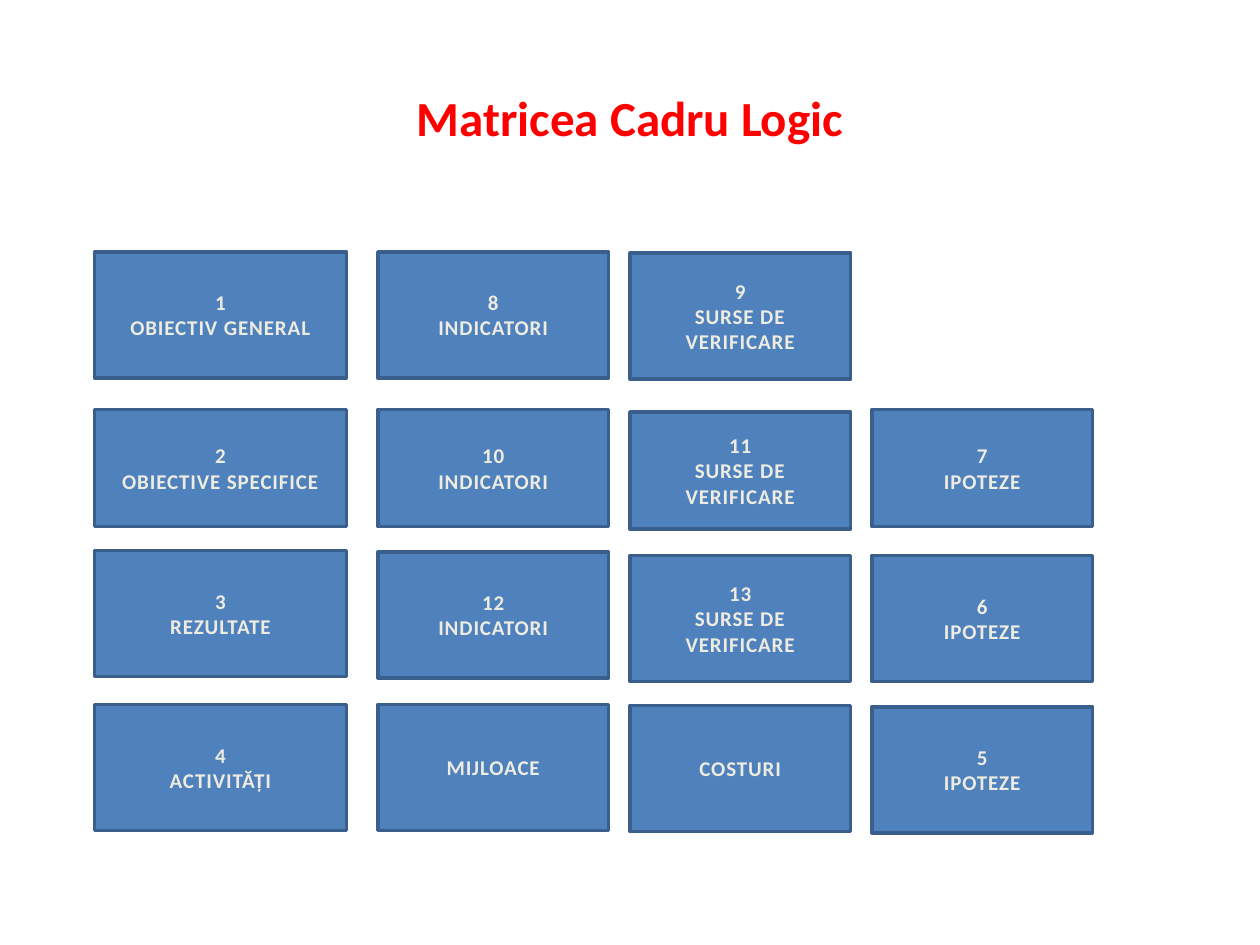
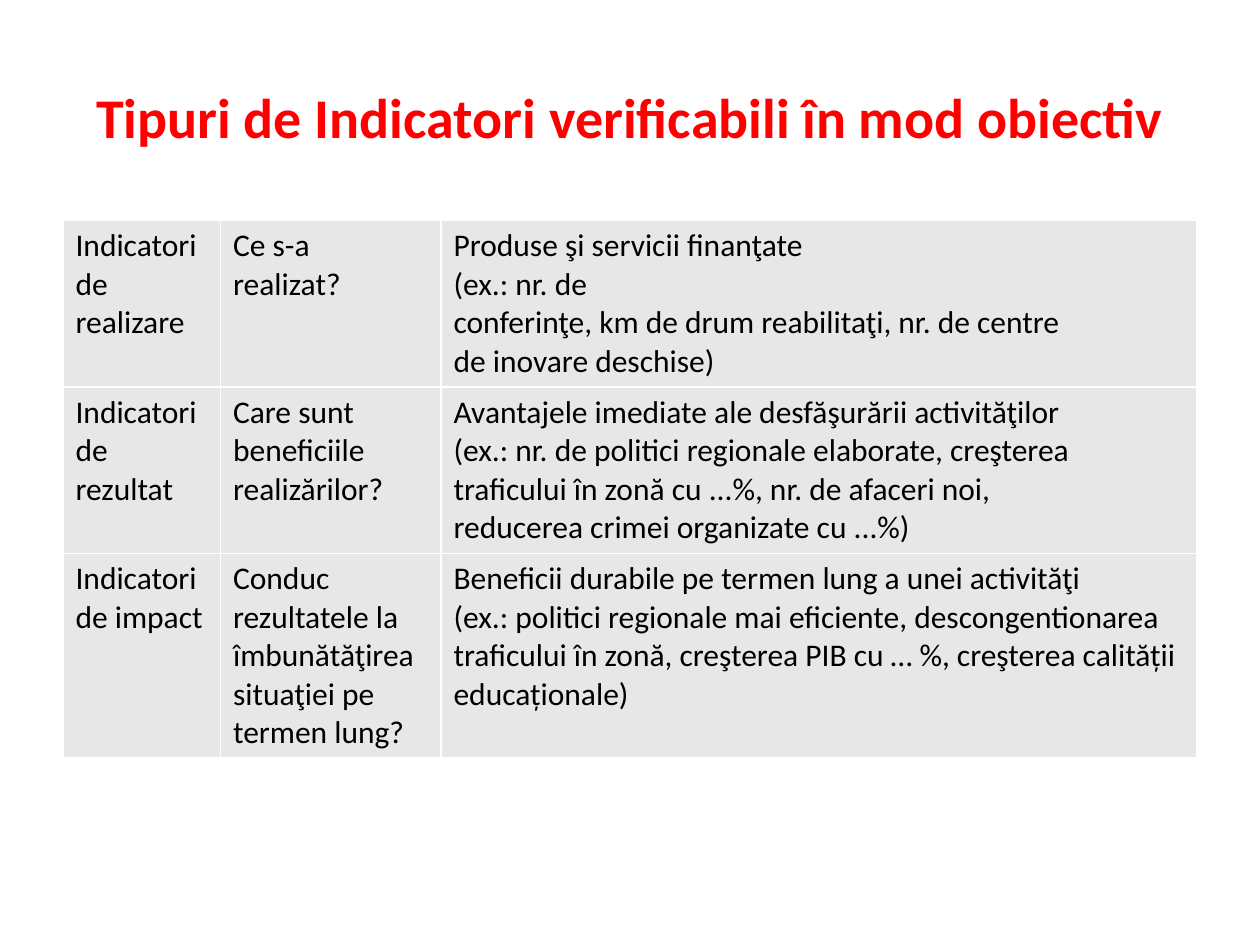
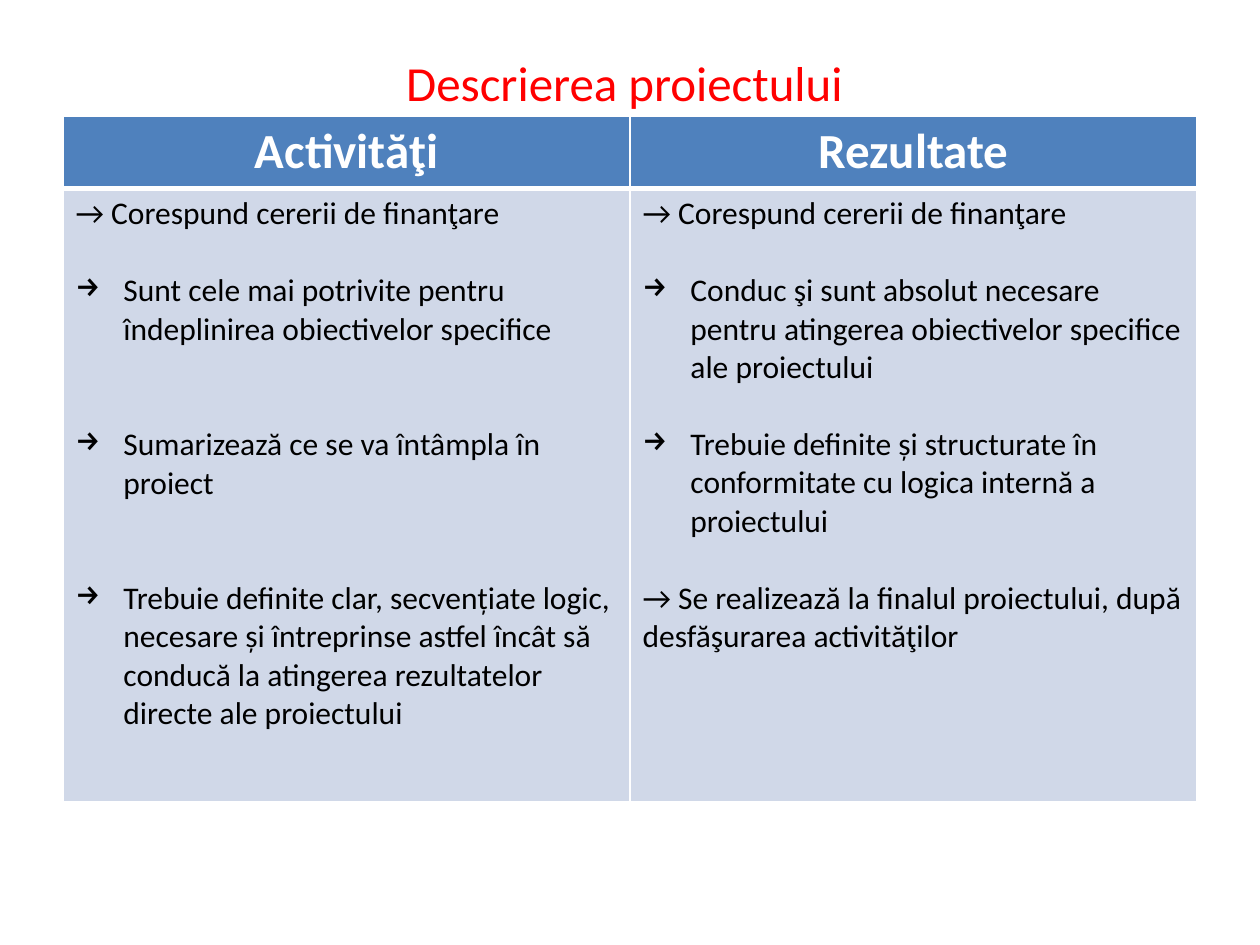
from dataclasses import dataclass

from lxml import etree
from pptx import Presentation
from pptx import util as u
from pptx.dml.color import RGBColor
from pptx.enum import shapes, text
from pptx.oxml import ns

# Shared look
FONT = "Calibri"
HUES = {
    "title": "FF0000", "blue": "4F81BD", "edge": "3A5F8C", "cream": "EEECE1",
    "white": "FFFFFF", "black": "000000", "gray": "E7E7E7", "pale": "D0D8E8",
}
SCALE = 9144  # EMU in one px, 100 px to the inch
LINE = 22  # points in one line of 18-point text


@dataclass
class Column:
    left: int
    width: int
    tops: tuple[int, ...]
    labels: tuple[str, ...]


@dataclass
class Item:
    words: str
    gap: int = 0  # empty lines above
    bullet: bool = False


def px(n: int) -> u.Emu:
    return u.Emu(n * SCALE)


def hue(name: str) -> RGBColor:
    return RGBColor.from_string(HUES[name])


def style(para, size: int, color: str, bold: bool = False, center: bool = False) -> None:
    if center:
        para.alignment = text.PP_ALIGN.CENTER
    font = para.font
    font.name, font.size, font.bold = FONT, u.Pt(size), bold
    font.color.rgb = hue(color)


def add_page(deck, title: str, size: int, bold: bool = True, height: int = 125):
    page = deck.slides.add_slide(deck.slide_layouts[5])
    head = page.shapes.title
    head.left, head.top, head.width, head.height = map(px, (50, 30, 900, height))
    frame = head.text_frame
    frame.text = title
    frame.auto_size = text.MSO_AUTO_SIZE.NONE
    frame.vertical_anchor = text.MSO_ANCHOR.MIDDLE
    style(frame.paragraphs[0], size, "title", bold, True)
    return page


def add_box(page, left: int, top: int, width: int, height: int, label: str) -> None:
    box = page.shapes.add_shape(shapes.MSO_SHAPE.RECTANGLE, *map(px, (left, top, width, height)))
    box.shadow.inherit = False
    box.fill.solid()
    box.fill.fore_color.rgb = hue("blue")
    box.line.color.rgb = hue("edge")
    box.line.width = u.Pt(2)
    frame = box.text_frame
    frame.word_wrap = True
    frame.vertical_anchor = text.MSO_ANCHOR.MIDDLE
    frame.text = label
    for para in frame.paragraphs:
        style(para, 12, "cream", True, True)
        for run in para.runs:
            run._r.get_or_add_rPr().set("spc", "50")


def add_grid(page, top: int, widths: tuple[int, ...], heights: tuple[int, ...]):
    area = map(px, (50, top, sum(widths), sum(heights)))
    grid = page.shapes.add_table(len(heights), len(widths), *area).table
    grid.first_row = grid.horz_banding = False
    for col, width in zip(grid.columns, widths):
        col.width = px(width)
    for row, height in zip(grid.rows, heights):
        row.height = px(height)
    return grid


def paint(cell, fill: str, thick: str = "") -> None:
    """Give a cell its white borders and its fill; the thick side gets 3 points."""
    props = cell._tc.get_or_add_tcPr()
    for side in "LRTB":
        width = u.Pt(3 if side == thick else 1)
        line = etree.SubElement(props, ns.qn(f"a:ln{side}"), w=str(int(width)))
        solid = etree.SubElement(line, ns.qn("a:solidFill"))
        etree.SubElement(solid, ns.qn("a:srgbClr"), val=HUES["white"])
    cell.fill.solid()
    cell.fill.fore_color.rgb = hue(fill)


def add_items(cell, items: list[Item]) -> None:
    cell.text = "\n".join(item.words for item in items)
    for para, item in zip(cell.text_frame.paragraphs, items):
        if item.gap:
            para.space_before = u.Pt(item.gap * LINE)
        if item.bullet:
            props = para._p.get_or_add_pPr()
            props.set("marL", str(px(38)))
            props.set("indent", str(-px(38)))
            etree.SubElement(props, ns.qn("a:buChar"), char="→")
        style(para, 18, "black")


# Slide 1: logical framework
HIGHS = (100, 93, 100, 100)
COLUMNS = [
    Column(75, 200, (200, 325, 437, 559),
           ("1\nOBIECTIV GENERAL", "2\nOBIECTIVE SPECIFICE", "3\nREZULTATE", "4\nACTIVITĂȚI")),
    Column(300, 183, (200, 325, 438, 559),
           ("8\nINDICATORI", "10\nINDICATORI", "12\nINDICATORI", "MIJLOACE")),
    Column(500, 175, (201, 327, 441, 560),
           ("9\nSURSE DE VERIFICARE", "11\nSURSE DE VERIFICARE",
            "13\nSURSE DE VERIFICARE", "COSTURI")),
    Column(692, 175, (200, 325, 441, 561),
           ("", "7\nIPOTEZE", "6\nIPOTEZE", "5\nIPOTEZE")),
]

# Slide 2: kinds of indicators
KINDS = [
    ("Indicatori\nde\nrealizare",
     "Ce s-a\nrealizat?",
     "Produse şi servicii finanţate\n(ex.: nr. de\n"
     "conferinţe, km de drum reabilitaţi, nr. de centre\nde inovare deschise)"),
    ("Indicatori\nde\nrezultat",
     "Care sunt\nbeneficiile\nrealizărilor?",
     "Avantajele imediate ale desfăşurării activităţilor\n"
     "(ex.: nr. de politici regionale elaborate, creşterea\n"
     "traficului în zonă cu ...%, nr. de afaceri noi,\n"
     "reducerea crimei organizate cu ...%)"),
    ("Indicatori\nde impact",
     "Conduc\nrezultatele la\nîmbunătăţirea\nsituaţiei pe\ntermen lung?",
     "Beneficii durabile pe termen lung a unei activităţi\n"
     "(ex.: politici regionale mai eficiente, descongentionarea traficului în zonă, "
     "creşterea PIB cu … %, creşterea calității educaționale)"),
]

# Slide 3: project description
PARTS = {
    "Activităţi": [
        Item("→ Corespund cererii de finanţare"),
        Item("Sunt cele mai potrivite pentru îndeplinirea obiectivelor specifice", 1, True),
        Item("Sumarizează ce se va întâmpla în proiect", 2, True),
        Item("Trebuie definite clar, secvențiate logic, necesare și întreprinse astfel încât "
             "să conducă la atingerea rezultatelor directe ale proiectului", 2, True),
    ],
    "Rezultate": [
        Item("→ Corespund cererii de finanţare"),
        Item("Conduc şi sunt absolut necesare pentru atingerea obiectivelor specifice "
             "ale proiectului", 1, True),
        Item("Trebuie definite și structurate în conformitate cu logica internă "
             "a proiectului", 1, True),
        Item("→ Se realizează la finalul proiectului, după desfăşurarea activităţilor", 1),
    ],
}


def draw_frame(deck) -> None:
    page = add_page(deck, "Matricea Cadru Logic", 28)
    for col in COLUMNS:
        for top, height, label in zip(col.tops, HIGHS, col.labels):
            if label:
                add_box(page, col.left, top, col.width, height, label)


def draw_kinds(deck) -> None:
    page = add_page(deck, "Tipuri de Indicatori verificabili în mod obiectiv", 32)
    grid = add_grid(page, 175, (125, 175, 600), (132, 132, 162))
    for r, row in enumerate(KINDS):
        for c, words in enumerate(row):
            cell = grid.cell(r, c)
            add_items(cell, [Item(line) for line in words.split("\n")])
            paint(cell, "gray")


def draw_parts(deck) -> None:
    page = add_page(deck, "Descrierea proiectului ", 28, False, 70)
    grid = add_grid(page, 92, (450, 450), (57, 487))
    for c, (name, items) in enumerate(PARTS.items()):
        head, body = grid.cell(0, c), grid.cell(1, c)
        head.text = name
        style(head.text_frame.paragraphs[0], 28, "white", True, True)
        paint(head, "blue", "B")
        add_items(body, items)
        paint(body, "pale", "T")


def main() -> None:
    deck = Presentation()
    deck.slide_width, deck.slide_height = px(1000), px(750)
    draw_frame(deck)
    draw_kinds(deck)
    draw_parts(deck)
    deck.save("out.pptx")


if __name__ == "__main__":
    main()
